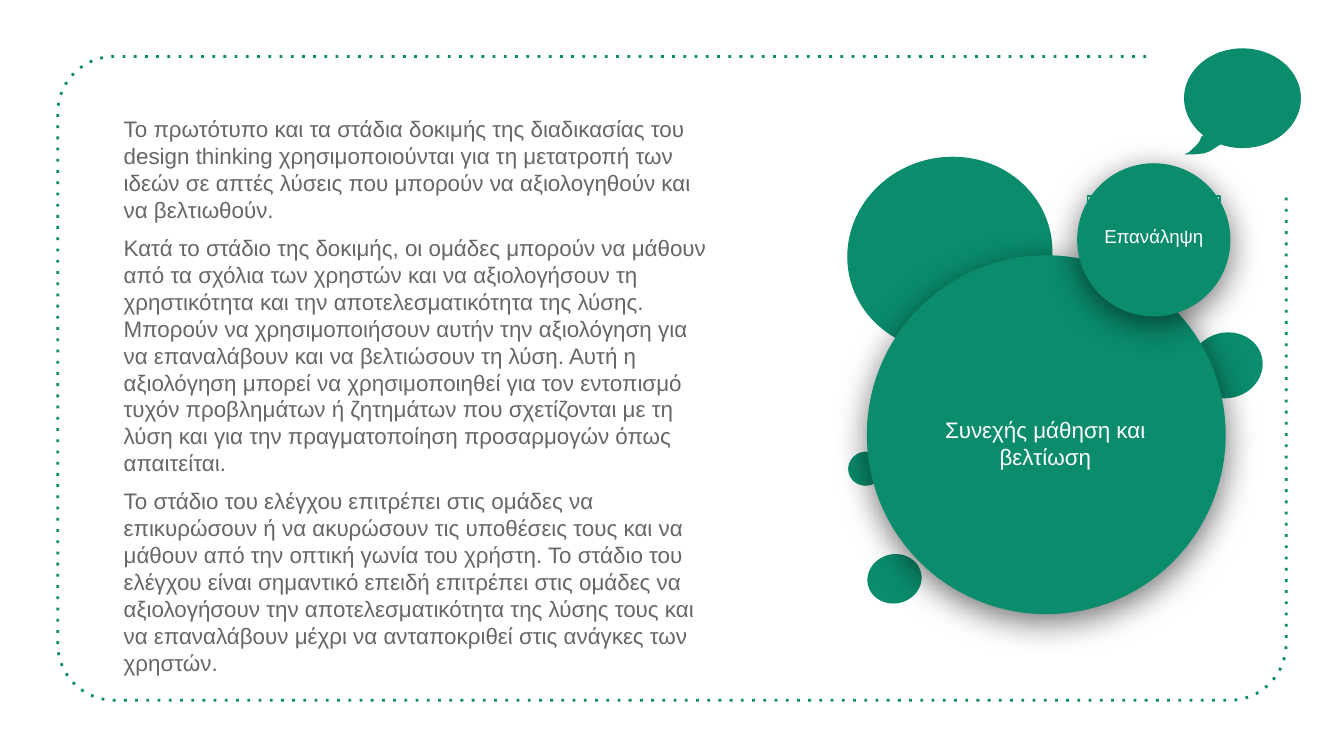
from math import cos, sin, radians
from lxml import etree
from pptx import Presentation
from pptx.dml.color import RGBColor
from pptx.enum.shapes import MSO_SHAPE
from pptx.enum.text import MSO_ANCHOR, MSO_AUTO_SIZE, PP_ALIGN
from pptx.oxml.ns import qn
from pptx.util import Inches, Pt

OVAL, RECT = MSO_SHAPE.OVAL, MSO_SHAPE.RECTANGLE
TOP, MIDDLE = MSO_ANCHOR.TOP, MSO_ANCHOR.MIDDLE
CENTER, LEFT = PP_ALIGN.CENTER, PP_ALIGN.LEFT
FIXED = MSO_AUTO_SIZE.NONE

GREEN = RGBColor(0x0A, 0x8C, 0x6D)
GREY = RGBColor(0x66, 0x66, 0x66)
WHITE = RGBColor(0xFF, 0xFF, 0xFF)
FONT = "Arial"
WIDE = Inches(10)
HIGH = WIDE * 9 // 16
TILT = 76.7

BODY = [
    "Το πρωτότυπο και τα στάδια δοκιμής της διαδικασίας του design thinking "
    "χρησιμοποιούνται για τη μετατροπή των ιδεών σε απτές λύσεις που μπορούν "
    "να αξιολογηθούν και να βελτιωθούν.",
    "Κατά το στάδιο της δοκιμής, οι ομάδες μπορούν να μάθουν από τα σχόλια των "
    "χρηστών και να αξιολογήσουν τη χρηστικότητα και την αποτελεσματικότητα της "
    "λύσης. Μπορούν να χρησιμοποιήσουν αυτήν την αξιολόγηση για να επαναλάβουν "
    "και να βελτιώσουν τη λύση. Αυτή η αξιολόγηση μπορεί να χρησιμοποιηθεί για "
    "τον εντοπισμό τυχόν προβλημάτων ή ζητημάτων που σχετίζονται με τη λύση και "
    "για την πραγματοποίηση προσαρμογών όπως απαιτείται.",
    "Το στάδιο του ελέγχου επιτρέπει στις ομάδες να επικυρώσουν ή να ακυρώσουν "
    "τις υποθέσεις τους και να μάθουν από την οπτική γωνία του χρήστη. Το στάδιο "
    "του ελέγχου είναι σημαντικό επειδή επιτρέπει στις ομάδες να αξιολογήσουν "
    "την αποτελεσματικότητα της λύσης τους και να επαναλάβουν μέχρι να "
    "ανταποκριθεί στις ανάγκες των χρηστών.",
]


def place(box, part):
    """Turn shares of a box into inches."""
    x, y, w, h = box
    a, b, c, d = part
    return x + a * w, y + b * h, c * w, d * h


def arc(cx, cy, rx, ry, start, end, steps):
    turns = [radians(start + (end - start) * i / steps) for i in range(steps + 1)]
    return [(cx + rx * cos(t), cy + ry * sin(t)) for t in turns]


def outline(shapes, points, close):
    spots = [(Inches(x), Inches(y)) for x, y in points]
    pen = shapes.build_freeform(*spots[0])
    pen.add_line_segments(spots[1:], close=close)
    shape = pen.convert_to_shape()
    shape.shadow.inherit = False
    return shape


def add_part(shapes, kind, box, fill=True, line=False):
    shape = shapes.add_shape(kind, *map(Inches, box))
    shape.shadow.inherit = False
    if fill:
        shape.fill.solid()
        shape.fill.fore_color.rgb = GREEN
    else:
        shape.fill.background()
    if line:
        shape.line.color.rgb = GREEN
        shape.line.width = Pt(0.75)
    else:
        shape.line.fill.background()
    return shape


def cast(shape):
    """Soft black shadow straight below the shape."""
    glow = shape._element.spPr.find(qn("a:effectLst"))
    drop = etree.SubElement(glow, qn("a:outerShdw"), blurRad=str(Pt(18)),
                            dist=str(Pt(4)), dir="5400000", algn="bl",
                            rotWithShape="0")
    tone = etree.SubElement(drop, qn("a:srgbClr"), val="000000")
    etree.SubElement(tone, qn("a:alpha"), val="55000")


def style(frame, size, color, align, anchor):
    frame.word_wrap = True
    frame.auto_size = FIXED
    frame.vertical_anchor = anchor
    frame.margin_left = frame.margin_right = Inches(0.1)
    frame.margin_top = frame.margin_bottom = Inches(0.1)
    for para in frame.paragraphs:
        para.alignment = align
        para.line_spacing = 1.0
        for run in para.runs:
            run.font.size = Pt(size)
            run.font.name = FONT
            run.font.color.rgb = color


def add_frame(slide, box, r=0.42):
    """Dotted round frame, open at its top right corner."""
    x, y, w, h = box
    right, base = x + w, y + h
    points = [(x + 0.886 * w, y)]
    points += arc(x + r, y + r, r, r, 270, 180, 16)
    points += arc(x + r, base - r, r, r, 180, 90, 16)
    points += arc(right - r, base - r, r, r, 90, 0, 16)
    points += [(right, y + 0.217 * h)]
    frame = outline(slide.shapes, points, False)
    frame.fill.background()
    frame.line.color.rgb = GREEN
    frame.line.width = Pt(1.5)
    etree.SubElement(frame.line._get_or_add_ln(), qn("a:prstDash"), val="dot")


def add_body(slide, box):
    body = slide.placeholders[1]
    body.left, body.top, body.width, body.height = map(Inches, box)
    frame = body.text_frame
    frame.text = "\n".join(BODY)
    style(frame, 12, GREY, LEFT, TOP)
    for para in frame.paragraphs:
        para.space_before = Pt(6)
        props = para._p.get_or_add_pPr()
        props.set("marL", str(Inches(0.13)))
        props.set("indent", "0")
        etree.SubElement(props, qn("a:buNone"))


def add_bubble(slide, box):
    """Speech bubble: an oval with a curved tail at its lower left."""
    x, y, w, h = box
    rx, ry = w / 2, 0.47 * h
    tail = [(0.22, 0.97), (0.17, 0.99), (0.08, 1), (0, 1), (0.04, 0.98),
            (0.07, 0.95), (0.1, 0.92), (0.13, 0.88), (0.15, 0.83)]
    points = arc(x + rx, y + ry, rx, ry, 132, 472, 68)
    points += [(x + a * w, y + b * h) for a, b in tail]
    bubble = outline(slide.shapes, points, True)
    bubble.fill.solid()
    bubble.fill.fore_color.rgb = GREEN
    bubble.line.fill.background()


def add_dots(slide, box):
    """Tilted dots behind the labelled circles."""
    group = slide.shapes.add_group_shape().shapes
    dots = [
        ((0.84, 0.39, 0.16, 0.16), False),
        ((0.05, 0.88, 0.12, 0.12), False),
        ((0.35, 0.565, 0.34, 0.32), False),
        ((0.01, 0, 0.47, 0.45), True),
        ((0.29, 0.765, 0.18, 0.17), False),
        ((0, 0.66, 0.08, 0.075), True),
    ]
    for part, line in dots:
        dot = add_part(group, OVAL, place(box, part), line=line)
        dot.rotation = TILT


def add_circle(slide, box, part, text, size, small):
    """Shadowed circle with a label box on it."""
    group = slide.shapes.add_group_shape().shapes
    cast(add_part(group, OVAL, box, line=small))
    label = add_part(group, RECT, place(box, part), fill=not small, line=small)
    label.text_frame.text = text
    style(label.text_frame, size, WHITE, CENTER, MIDDLE)


def main():
    deck = Presentation()
    deck.slide_width, deck.slide_height = WIDE, HIGH
    slide = deck.slides.add_slide(deck.slide_layouts[1])
    title = slide.shapes.title._element
    title.getparent().remove(title)

    add_frame(slide, (0.43, 0.42, 9.14, 4.79))
    add_body(slide, (0.69, 0.76, 4.74, 2.59))
    add_bubble(slide, (8.81, 0.36, 0.87, 0.79))
    add_dots(slide, (6.32, 1.13, 3.05, 3.38))
    add_circle(slide, (6.45, 1.9, 2.67, 2.67), (0.115, 0.285, 0.765, 0.475),
               "Συνεχής μάθηση και βελτίωση", 12, False)
    add_circle(slide, (8.02, 1.22, 1.13, 1.13), (0.065, 0.21, 0.87, 0.53),
               "Επανάληψη", 10, True)
    deck.save("out.pptx")


if __name__ == "__main__":
    main()
